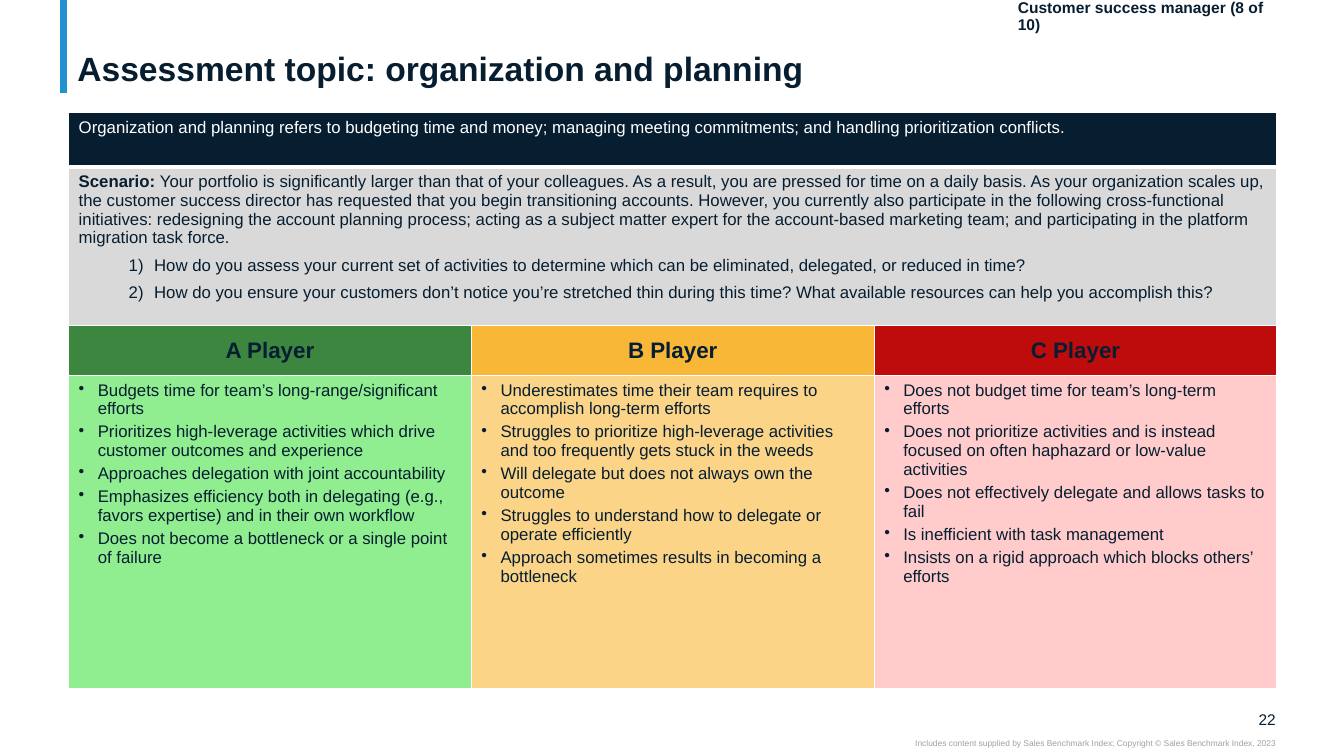
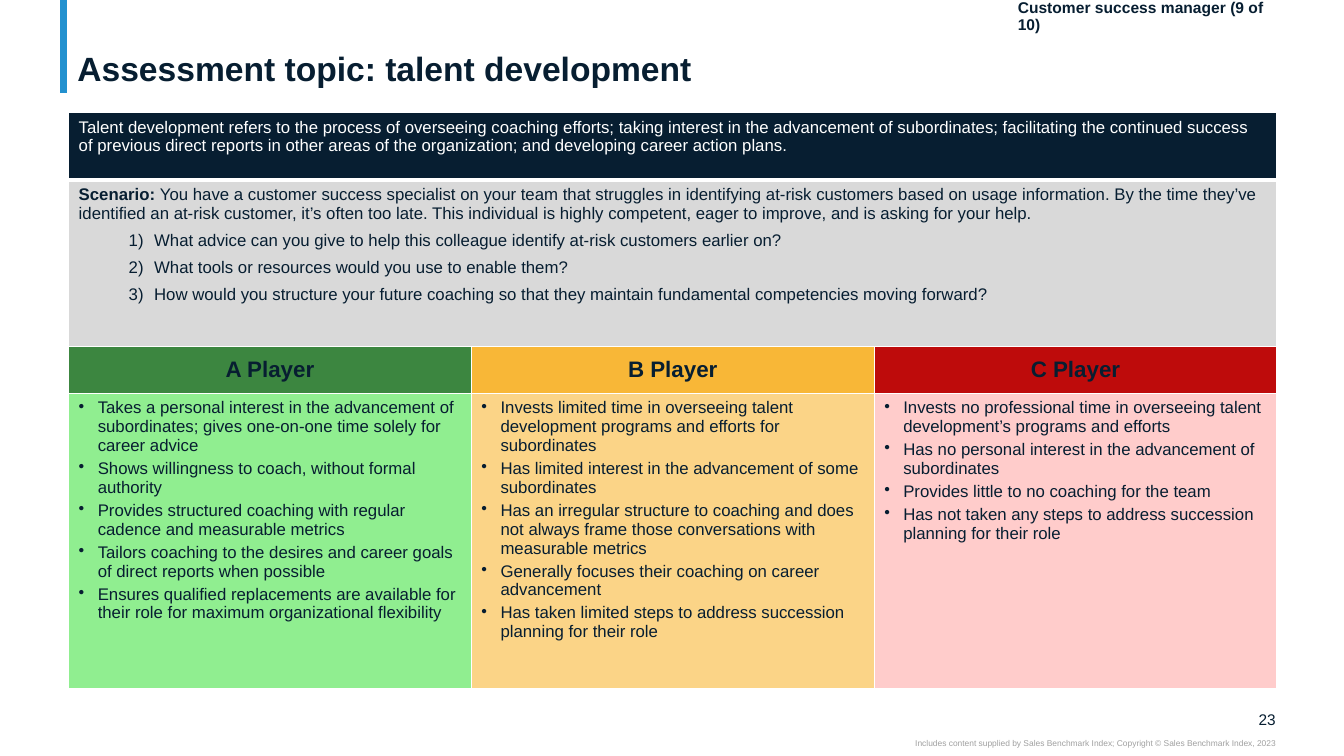
from lxml import etree
from pptx import Presentation
from pptx.dml.color import RGBColor
from pptx.enum.shapes import MSO_CONNECTOR
from pptx.enum.text import MSO_ANCHOR, PP_ALIGN
from pptx.oxml.ns import qn
from pptx.util import Cm, Pt

CENTER, RIGHT = PP_ALIGN.CENTER, PP_ALIGN.RIGHT
TOP, MIDDLE, BOTTOM = MSO_ANCHOR.TOP, MSO_ANCHOR.MIDDLE, MSO_ANCHOR.BOTTOM
STRAIGHT = MSO_CONNECTOR.STRAIGHT

FONT = "Arial"
COLORS = {
    "navy": "071E31", "white": "FFFFFF", "blue": "2391CF",
    "gray": "D9D9D9", "credit": "A0A0A0",
}
PLAYERS = [  # heading, heading fill, list fill
    ("A Player", "3C8640", "90EE90"),
    ("B Player", "F8B737", "FBD487"),
    ("C Player", "BE0B0B", "FFCCCB"),
]
BULLETS = {  # tag, attribute, value, left margin, hanging indent
    "dot": ("a:buChar", "char", "•", Cm(0.48), Cm(0.48)),
    "number": ("a:buAutoNum", "type", "arabicParenR", Cm(1.9), Cm(0.64)),
}
CREDIT = ("Includes content supplied by Sales Benchmark Index; "
          "Copyright © Sales Benchmark Index, 2023")
GRID_LEFT, GRID_TOP, GRID_WIDTH, GRID_HEIGHT = Cm(1.73), Cm(2.84), Cm(30.45), Cm(14.5)

TOPICS = [
    {
        "page": 22,
        "tag": "Customer success manager (8 of 10)",
        "title": "Assessment topic: organization and planning",
        "definition": "Organization and planning refers to budgeting time and money; managing meeting commitments; and handling prioritization conflicts.",
        "scenario": "Your portfolio is significantly larger than that of your colleagues. As a result, you are pressed for time on a daily basis. As your organization scales up, the customer success director has requested that you begin transitioning accounts. However, you currently also participate in the following cross-functional initiatives: redesigning the account planning process; acting as a subject matter expert for the account-based marketing team; and participating in the platform migration task force.",
        "questions": [
            "How do you assess your current set of activities to determine which can be eliminated, delegated, or reduced in time?",
            "How do you ensure your customers don’t notice you’re stretched thin during this time? What available resources can help you accomplish this?",
        ],
        "upper_rows": [Cm(1.37), Cm(3.99), Cm(1.27)],
        "behaviors": [
            [
                "Budgets time for team’s long-range/significant efforts",
                "Prioritizes high-leverage activities which drive customer outcomes and experience",
                "Approaches delegation with joint accountability",
                "Emphasizes efficiency both in delegating (e.g., favors expertise) and in their own workflow",
                "Does not become a bottleneck or a single point of failure",
            ],
            [
                "Underestimates time their team requires to accomplish long-term efforts",
                "Struggles to prioritize high-leverage activities and too frequently gets stuck in the weeds",
                "Will delegate but does not always own the outcome",
                "Struggles to understand how to delegate or operate efficiently",
                "Approach sometimes results in becoming a bottleneck",
            ],
            [
                "Does not budget time for team’s long-term efforts",
                "Does not prioritize activities and is instead focused on often haphazard or low-value activities",
                "Does not effectively delegate and allows tasks to fail",
                "Is inefficient with task management",
                "Insists on a rigid approach which blocks others’ efforts",
            ],
        ],
    },
    {
        "page": 23,
        "tag": "Customer success manager (9 of 10)",
        "title": "Assessment topic: talent development",
        "definition": "Talent development refers to the process of overseeing coaching efforts; taking interest in the advancement of subordinates; facilitating the continued success of previous direct reports in other areas of the organization; and developing career action plans.",
        "scenario": "You have a customer success specialist on your team that struggles in identifying at-risk customers based on usage information. By the time they’ve identified an at-risk customer, it’s often too late. This individual is highly competent, eager to improve, and is asking for your help.",
        "questions": [
            "What advice can you give to help this colleague identify at-risk customers earlier on?",
            "What tools or resources would you use to enable them?",
            "How would you structure your future coaching so that they maintain fundamental competencies moving forward?",
        ],
        "upper_rows": [Cm(1.7), Cm(4.19), Cm(1.19)],
        "behaviors": [
            [
                "Takes a personal interest in the advancement of subordinates; gives one-on-one time solely for career advice",
                "Shows willingness to coach, without formal authority",
                "Provides structured coaching with regular cadence and measurable metrics",
                "Tailors coaching to the desires and career goals of direct reports when possible",
                "Ensures qualified replacements are available for their role for maximum organizational flexibility",
            ],
            [
                "Invests limited time in overseeing talent development programs and efforts for subordinates",
                "Has limited interest in the advancement of some subordinates",
                "Has an irregular structure to coaching and does not always frame those conversations with measurable metrics",
                "Generally focuses their coaching on career advancement",
                "Has taken limited steps to address succession planning for their role",
            ],
            [
                "Invests no professional time in overseeing talent development’s programs and efforts",
                "Has no personal interest in the advancement of subordinates",
                "Provides little to no coaching for the team",
                "Has not taken any steps to address succession planning for their role",
            ],
        ],
    },
]


def add_text(frame, text, size=12, color="navy", bold=False, align=None,
             bullet=None, before=0, after=0, spacing=None, lead=""):
    """Add a paragraph, filling the empty first one; lead is a bold opening."""
    is_first = not frame.text
    paragraph = frame.paragraphs[0] if is_first else frame.add_paragraph()
    if bullet:
        tag, attribute, value, margin, hanging = BULLETS[bullet]
        properties = paragraph._p.get_or_add_pPr()
        properties.set("marL", str(margin))
        properties.set("indent", str(-hanging))
        etree.SubElement(properties, qn(tag)).set(attribute, value)
    paragraph.alignment = align
    paragraph.line_spacing = spacing
    paragraph.space_before = Pt(0 if is_first else before)
    paragraph.space_after = Pt(after)
    for part, is_bold in ((lead, True), (text, bold)):
        if part:
            run = paragraph.add_run()
            run.text = part
            run.font.name = FONT
            run.font.size = Pt(size)
            run.font.bold = is_bold
            run.font.color.rgb = RGBColor.from_string(COLORS[color])


def add_box(slide, left, top, width, height, anchor=TOP, side_margin=0):
    frame = slide.shapes.add_textbox(Cm(left), Cm(top), Cm(width), Cm(height)).text_frame
    frame.word_wrap = True
    frame.vertical_anchor = anchor
    frame.margin_top = frame.margin_bottom = 0
    frame.margin_left = frame.margin_right = Cm(side_margin)
    return frame


prs = Presentation()
prs.slide_width, prs.slide_height = Cm(33.87), Cm(19.05)

for topic in TOPICS:
    slide = prs.slides.add_slide(prs.slide_layouts[6])

    accent = slide.shapes.add_connector(STRAIGHT, Cm(1.6), 0, Cm(1.6), Cm(2.34))
    accent.line.color.rgb = RGBColor.from_string(COLORS["blue"])
    accent.line.width = Pt(5)
    etree.SubElement(accent._element.spPr, qn("a:effectLst"))

    add_text(add_box(slide, 31.3, 17.9, 0.85, 0.48, MIDDLE), str(topic["page"]),
             size=11, align=RIGHT)
    add_text(add_box(slide, 19.05, 18.6, 13.1, 0.25), CREDIT,
             size=6, color="credit", align=RIGHT)
    add_text(add_box(slide, 1.7, 0.1, 30.45, 2.13, BOTTOM, 0.25), topic["title"],
             size=24, bold=True, spacing=0.9)

    table = slide.shapes.add_table(4, 3, GRID_LEFT, GRID_TOP, GRID_WIDTH, GRID_HEIGHT).table
    table.first_row = table.horz_banding = False
    for column in table.columns:
        column.width = GRID_WIDTH // 3
    heights = topic["upper_rows"] + [GRID_HEIGHT - sum(topic["upper_rows"])]
    for row, height in zip(table.rows, heights):
        row.height = height

    row_fills = [
        [COLORS["navy"]] * 3,
        [COLORS["gray"]] * 3,
        [heading_fill for _, heading_fill, _ in PLAYERS],
        [list_fill for _, _, list_fill in PLAYERS],
    ]
    for row_index, fills in enumerate(row_fills):
        border_widths = {
            "a:lnL": 1, "a:lnR": 1,
            "a:lnT": 3 if row_index == 1 else 1,
            "a:lnB": 3 if row_index == 0 else 1,
        }
        for column_index, fill in enumerate(fills):
            cell = table.cell(row_index, column_index)
            for side, width in border_widths.items():
                border = etree.SubElement(cell._tc.get_or_add_tcPr(), qn(side), w=str(Pt(width)))
                solid = etree.SubElement(border, qn("a:solidFill"))
                etree.SubElement(solid, qn("a:srgbClr"), val=COLORS["white"])
            cell.fill.solid()
            cell.fill.fore_color.rgb = RGBColor.from_string(fill)
    for row_index in (0, 1):
        table.cell(row_index, 0).merge(table.cell(row_index, 2))

    add_text(table.cell(0, 0).text_frame, topic["definition"], color="white")
    scenario = table.cell(1, 0).text_frame
    add_text(scenario, topic["scenario"], lead="Scenario: ", after=6)
    for question in topic["questions"]:
        add_text(scenario, question, bullet="number", after=6)

    for column_index, (player, _, _) in enumerate(PLAYERS):
        heading = table.cell(2, column_index)
        heading.vertical_anchor = MIDDLE
        add_text(heading.text_frame, player, size=16, bold=True, align=CENTER)
        for behavior in topic["behaviors"][column_index]:
            add_text(table.cell(3, column_index).text_frame, behavior,
                     bullet="dot", before=3)

    add_text(add_box(slide, 25.4, 0.1, 6.75, 0.76, BOTTOM, 0.25), topic["tag"],
             size=11.1, bold=True, spacing=0.9)

prs.save("out.pptx")
